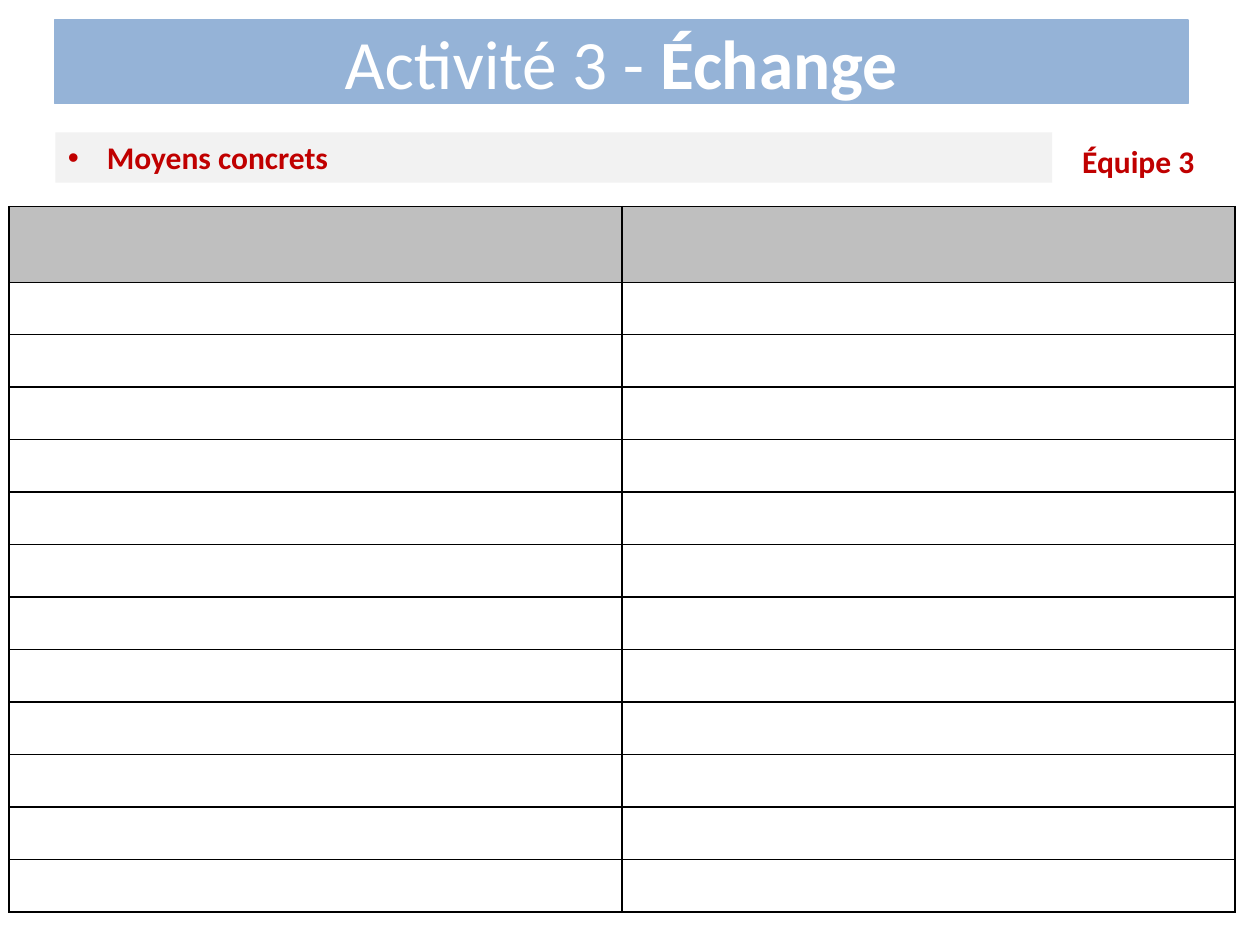
from lxml.etree import SubElement
from pptx import Presentation
from pptx.dml.color import RGBColor
from pptx.enum.shapes import MSO_SHAPE
from pptx.enum.text import MSO_ANCHOR, MSO_AUTO_SIZE, PP_ALIGN
from pptx.oxml.ns import qn
from pptx.util import Inches, Pt

BLUE = RGBColor(0x95, 0xB3, 0xD7)
WHITE = RGBColor(0xFF, 0xFF, 0xFF)
RED = RGBColor(0xC0, 0x00, 0x00)
PALE = RGBColor(0xF2, 0xF2, 0xF2)
GREY = RGBColor(0xBF, 0xBF, 0xBF)
BLACK = RGBColor(0x00, 0x00, 0x00)
FONT = "Calibri"


def inches(*box):
    return [Inches(v) for v in box]


def add_run(p, text, size, color, bold):
    r = p.add_run()
    r.text = text
    r.font.name = FONT
    r.font.size = Pt(size)
    r.font.bold = bold
    r.font.color.rgb = color


def add_title(slide, box):
    sp = slide.shapes.title
    sp.left, sp.top, sp.width, sp.height = inches(*box)
    sp.fill.solid()
    sp.fill.fore_color.rgb = BLUE
    sp.line.color.rgb = BLUE
    sp.line.width = Pt(0.75)
    tf = sp.text_frame
    tf.auto_size = MSO_AUTO_SIZE.NONE
    tf.vertical_anchor = MSO_ANCHOR.MIDDLE
    p = tf.paragraphs[0]
    p.alignment = PP_ALIGN.CENTER
    add_run(p, "Activité 3 - ", 39.6, WHITE, False)
    add_run(p, "Échange", 39.6, WHITE, True)


def add_heading(slide, box):
    sp = slide.shapes.add_shape(MSO_SHAPE.RECTANGLE, *inches(*box))
    sp.shadow.inherit = False
    sp.fill.solid()
    sp.fill.fore_color.rgb = PALE
    sp.line.fill.background()
    tf = sp.text_frame
    tf.word_wrap = True
    tf.auto_size = MSO_AUTO_SIZE.SHAPE_TO_FIT_TEXT
    tf.vertical_anchor = MSO_ANCHOR.TOP
    p = tf.paragraphs[0]
    p.alignment = PP_ALIGN.LEFT
    pPr = p._p.get_or_add_pPr()
    pPr.set("marL", str(Inches(0.31)))
    pPr.set("indent", str(-Inches(0.31)))
    SubElement(pPr, qn("a:buFont"), typeface="Arial")
    SubElement(pPr, qn("a:buChar"), char="•")
    add_run(p, "Moyens concrets", 18, RED, True)


def add_team(slide, box):
    tf = slide.shapes.add_textbox(*inches(*box)).text_frame
    tf.word_wrap = True
    tf.auto_size = MSO_AUTO_SIZE.SHAPE_TO_FIT_TEXT
    add_run(tf.paragraphs[0], "Équipe 3", 18, RED, True)


def set_borders(cell):
    tcPr = cell._tc.get_or_add_tcPr()
    for side in ("a:lnL", "a:lnR", "a:lnT", "a:lnB"):
        ln = SubElement(tcPr, qn(side), w=str(Pt(1)))
        fill = SubElement(ln, qn("a:solidFill"))
        SubElement(fill, qn("a:srgbClr"), val=str(BLACK))


def add_answer_table(slide, box, body_rows=12, header_height=0.6):
    left, top, width, height = box
    table = slide.shapes.add_table(body_rows + 1, 2, *inches(*box)).table
    table.first_row = False
    table.horz_banding = False
    for col in table.columns:
        col.width = Inches(width / 2)
    for i, row in enumerate(table.rows):
        body_height = (height - header_height) / body_rows
        row.height = Inches(body_height if i else header_height)
        for cell in row.cells:
            set_borders(cell)
            if i:
                cell.fill.background()
            else:
                cell.fill.solid()
                cell.fill.fore_color.rgb = GREY


def main():
    prs = Presentation()
    prs.slide_width, prs.slide_height = inches(10, 7.5)
    slide = prs.slides.add_slide(prs.slide_layouts[5])
    add_title(slide, (0.43, 0.16, 9, 0.66))
    add_answer_table(slide, (0.07, 1.64, 9.73, 5.6))
    add_heading(slide, (0.44, 1.05, 7.91, 0.4))
    add_team(slide, (8.49, 1.08, 1.19, 0.4))
    prs.save("out.pptx")


if __name__ == "__main__":
    main()
